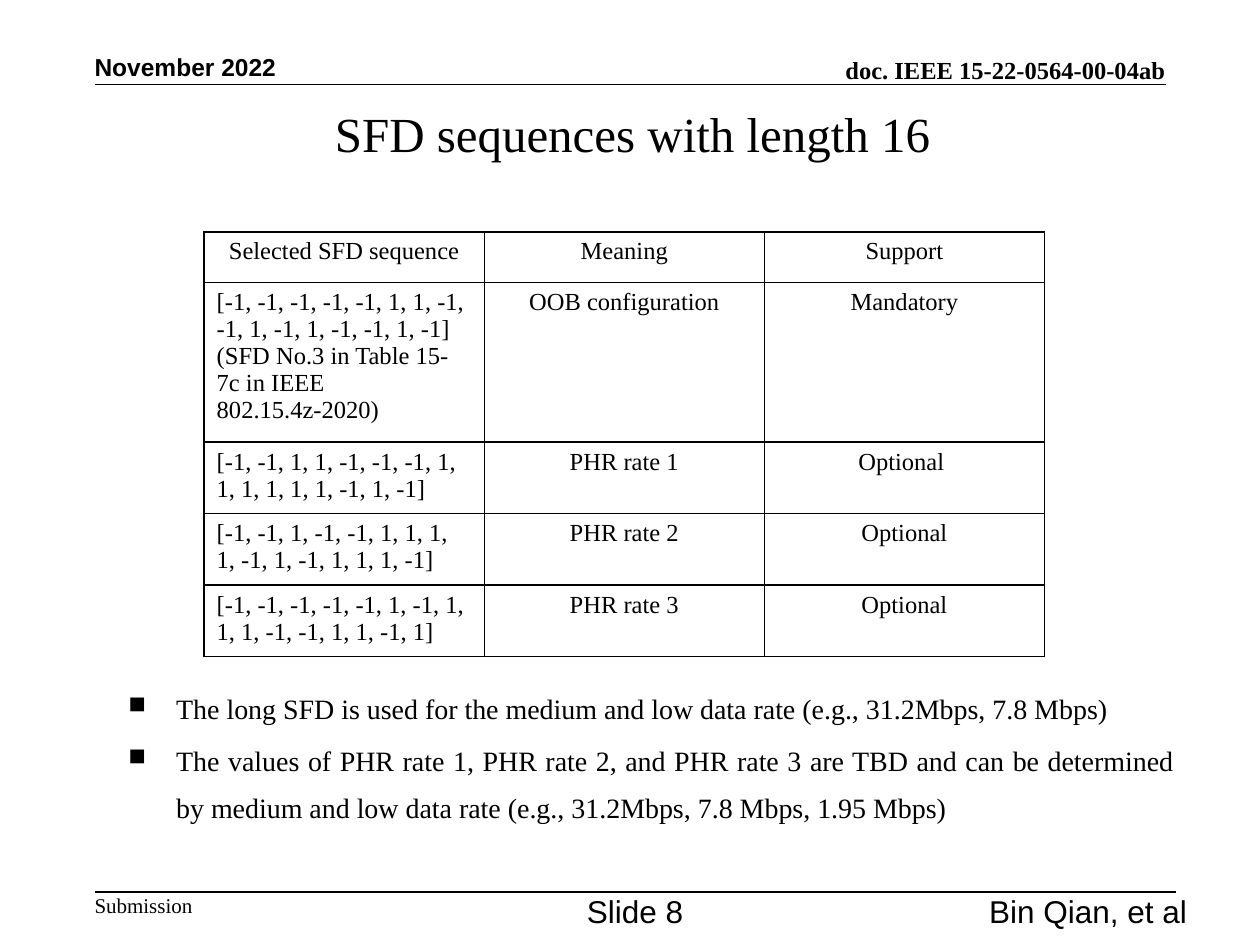
from lxml import etree
from pptx import Presentation
from pptx.dml.color import RGBColor
from pptx.enum.shapes import MSO_CONNECTOR
from pptx.enum.text import MSO_ANCHOR, MSO_AUTO_SIZE, PP_ALIGN
from pptx.oxml.ns import qn
from pptx.util import Inches, Pt

LEFT, MID, RIGHT, JUST = PP_ALIGN.LEFT, PP_ALIGN.CENTER, PP_ALIGN.RIGHT, PP_ALIGN.JUSTIFY
TOP, CENTER, BOTTOM = MSO_ANCHOR.TOP, MSO_ANCHOR.MIDDLE, MSO_ANCHOR.BOTTOM
GROW, FIXED = MSO_AUTO_SIZE.SHAPE_TO_FIT_TEXT, MSO_AUTO_SIZE.NONE
LINE = MSO_CONNECTOR.STRAIGHT
COLORS = {"ink": "000000", "paper": "FFFFFF"}
SERIF, SANS = "Times New Roman", "Arial"

ROWS = [
    (["Selected SFD sequence"], "Meaning", "Support"),
    (["[-1, -1, -1, -1, -1, 1, 1, -1, -1, 1, -1, 1, -1, -1, 1, -1]",
      "(SFD No.3 in Table 15-7c in IEEE 802.15.4z-2020)"],
     "OOB configuration", "Mandatory"),
    (["[-1, -1, 1, 1, -1, -1, -1, 1, 1, 1, 1, 1, 1, -1, 1, -1]"],
     "PHR rate 1", "Optional "),
    (["[-1, -1, 1, -1, -1, 1, 1, 1, 1, -1, 1, -1, 1, 1, 1, -1]"],
     "PHR rate 2", "Optional"),
    (["[-1, -1, -1, -1, -1, 1, -1, 1, 1, 1, -1, -1, 1, 1, -1, 1]"],
     "PHR rate 3", "Optional"),
]
HEIGHTS = [0.4, 1.18] + [0.53] * 3
NOTES = [
    "The long SFD is used for the medium and low data rate (e.g., 31.2Mbps, 7.8 Mbps)",
    "The values of PHR rate 1, PHR rate 2, and PHR rate 3 are TBD and can be determined "
    "by medium and low data rate (e.g., 31.2Mbps, 7.8 Mbps, 1.95 Mbps)",
]


def ink(name):
    return RGBColor.from_string(COLORS[name])


def add_run(para, text, size, face=SERIF, bold=False):
    run = para.add_run()
    run.text = text
    font = run.font
    font.size, font.name, font.bold = Pt(size), face, bold
    font.color.rgb = ink("ink")


def add_frame(slide, box, anchor=TOP, pad=(0, 0), fit=FIXED):
    frame = slide.shapes.add_textbox(*map(Inches, box)).text_frame
    frame.word_wrap = True
    frame.auto_size = fit
    frame.vertical_anchor = anchor
    frame.margin_left = frame.margin_right = Inches(pad[0])
    frame.margin_top = frame.margin_bottom = Inches(pad[1])
    return frame


def add_label(slide, box, text, size, face=SERIF, align=LEFT, bold=False, **kind):
    para = add_frame(slide, box, **kind).paragraphs[0]
    para.alignment = align
    add_run(para, text, size, face, bold)


def add_rule(slide, left, top, width):
    rule = slide.shapes.add_connector(
        LINE, Inches(left), Inches(top), Inches(left + width), Inches(top))
    rule.line.color.rgb = ink("ink")
    rule.line.width = Pt(1)
    etree.SubElement(rule._element.spPr, qn("a:effectLst"))


def add_header(slide, box):
    left, top, width, height = box
    add_label(slide, (left, top, 1.75, 0.24), "November 2022", 14, SANS,
              bold=True, anchor=BOTTOM)
    add_label(slide, (left + width - 5.82, top + 0.02, 5.82, 0.24),
              "doc. IEEE 15-22-0564-00-04ab", 14, align=RIGHT, bold=True, anchor=BOTTOM)
    add_rule(slide, left, top + height, width)


def add_footer(slide, box):
    left, top, width, height = box
    add_rule(slide, left, top, width)
    add_label(slide, (left, top, 0.78, height), "Submission", 12, fit=GROW)
    add_label(slide, (left + 3.84, top, 0.9, height), "Slide 8", 18, SANS, MID, fit=GROW)
    add_label(slide, (left + 5.25, top, 3.42, height), "Bin Qian, et al", 18, SANS,
              RIGHT, fit=GROW)


def add_border(cell):
    props = cell._tc.get_or_add_tcPr()
    for side in ("lnL", "lnR", "lnT", "lnB"):
        edge = etree.SubElement(props, qn(f"a:{side}"), w=str(Pt(1)))
        fill = etree.SubElement(edge, qn("a:solidFill"))
        etree.SubElement(fill, qn("a:srgbClr"), val=COLORS["ink"])


def fill_cell(cell, lines, align):
    add_border(cell)
    cell.fill.solid()
    cell.fill.fore_color.rgb = ink("paper")
    frame = cell.text_frame
    for i, line in enumerate(lines):
        para = frame.add_paragraph() if i else frame.paragraphs[0]
        para.alignment = align
        add_run(para, line, 14)


def add_grid(slide, box):
    table = slide.shapes.add_table(len(ROWS), len(ROWS[0]), *map(Inches, box)).table
    table.first_row = table.horz_banding = False
    for r, (codes, use, need) in enumerate(ROWS):
        table.rows[r].height = Inches(HEIGHTS[r])
        fill_cell(table.cell(r, 0), codes, LEFT if r else MID)
        fill_cell(table.cell(r, 1), [use], MID)
        fill_cell(table.cell(r, 2), [need], MID)


def add_notes(slide, box):
    frame = add_frame(slide, box, pad=(0.1, 0.05))
    for i, note in enumerate(NOTES):
        para = frame.add_paragraph() if i else frame.paragraphs[0]
        props = para._p.get_or_add_pPr()
        props.set("marL", str(Inches(0.38)))
        props.set("indent", str(-Inches(0.38)))
        etree.SubElement(props, qn("a:buSzPct"), val="85000")
        etree.SubElement(props, qn("a:buChar"), char="■")
        para.alignment = JUST
        para.line_spacing = 1.4
        para.space_before = Pt(3 if i else 0)
        add_run(para, note, 16)


def main():
    deck = Presentation()
    deck.slide_width, deck.slide_height = Inches(10), Inches(7.5)
    slide = deck.slides.add_slide(deck.slide_layouts[6])
    add_header(slide, (0.75, 0.41, 8.5, 0.26))
    add_footer(slide, (0.75, 7.08, 8.58, 0.2))
    add_label(slide, (0.77, 0.47, 8.5, 1.17), "SFD sequences with length 16", 28,
              align=MID, anchor=CENTER, pad=(0.1, 0.05))
    add_grid(slide, (1.62, 1.84, 6.67, sum(HEIGHTS)))
    add_notes(slide, (0.92, 5.33, 8.5, 1.24))
    deck.save("out.pptx")


if __name__ == "__main__":
    main()
